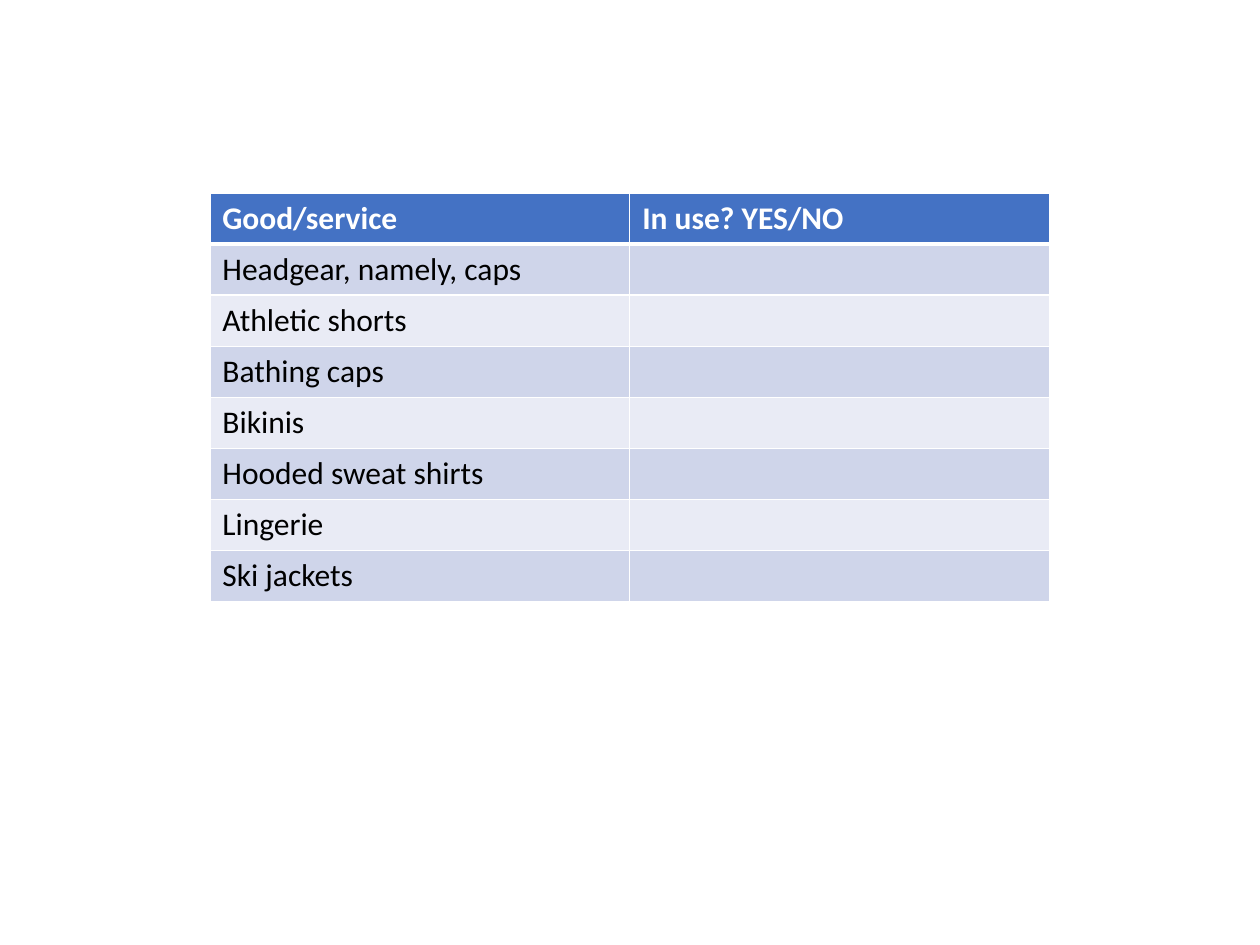
import pptx
import pptx.dml.color
import pptx.oxml
import pptx.oxml.ns
import pptx.util
from pptx.util import Cm


def rgb(value):
    return pptx.dml.color.RGBColor.from_string(value)


def add_border(cell, side, width):
    cell._tc.get_or_add_tcPr().append(pptx.oxml.parse_xml(
        f'<a:ln{side} {pptx.oxml.ns.nsdecls("a")} w="{pptx.util.Pt(width)}">'
        f'<a:solidFill><a:srgbClr val="FFFFFF"/></a:solidFill></a:ln{side}>'))


prs = pptx.Presentation()
prs.slide_width, prs.slide_height = Cm(25.4), Cm(19.05)
s = prs.slides.add_slide(prs.slide_layouts[6])

# Table of goods, second column left open for answers
header = ["Good/service", "In use? YES/NO"]
goods = ["Headgear, namely, caps", "Athletic shorts", "Bathing caps", "Bikinis",
         "Hooded sweat shirts", "Lingerie", "Ski jackets"]
rows = [header] + [[good, ""] for good in goods]
row_height = Cm(1.03)
table = s.shapes.add_table(len(rows), 2, Cm(4.23), Cm(3.89),
                           Cm(16.93), row_height * len(rows)).table

for i, row in enumerate(rows):
    table.rows[i].height = row_height
    if i == 0:
        fill, color = "4472C4", "FFFFFF"
    else:
        fill, color = "CFD5EA" if i % 2 else "E9EBF5", "000000"
    for j, text in enumerate(row):
        cell = table.cell(i, j)
        # White grid, heavier under the header
        for side in "LRTB":
            heavy = (i, side) in [(0, "B"), (1, "T")]
            add_border(cell, side, 3 if heavy else 1)
        cell.fill.solid()
        cell.fill.fore_color.rgb = rgb(fill)
        # Cell text
        cell.text_frame.text = text
        for r in cell.text_frame.paragraphs[0].runs:
            r.font.name = "Calibri"
            r.font.size = pptx.util.Pt(18)
            r.font.bold = i == 0
            r.font.color.rgb = rgb(color)

prs.save("out.pptx")
